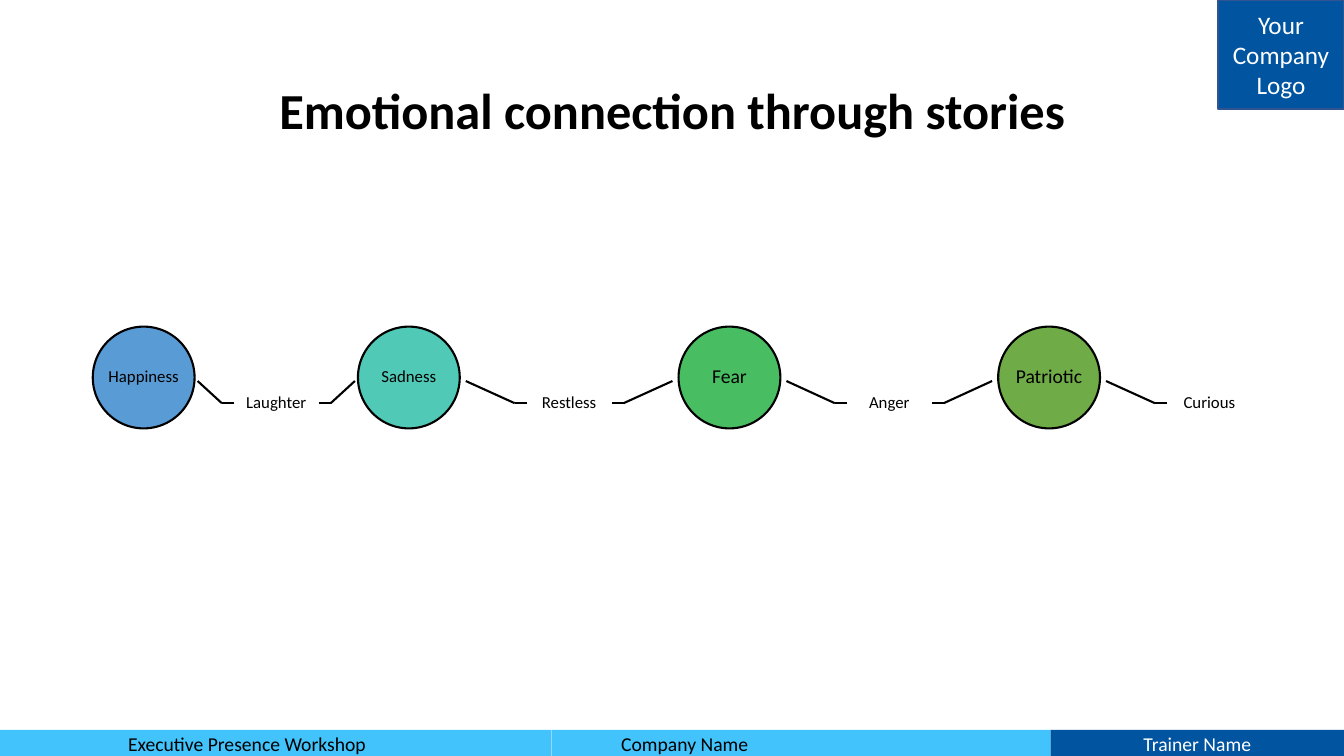
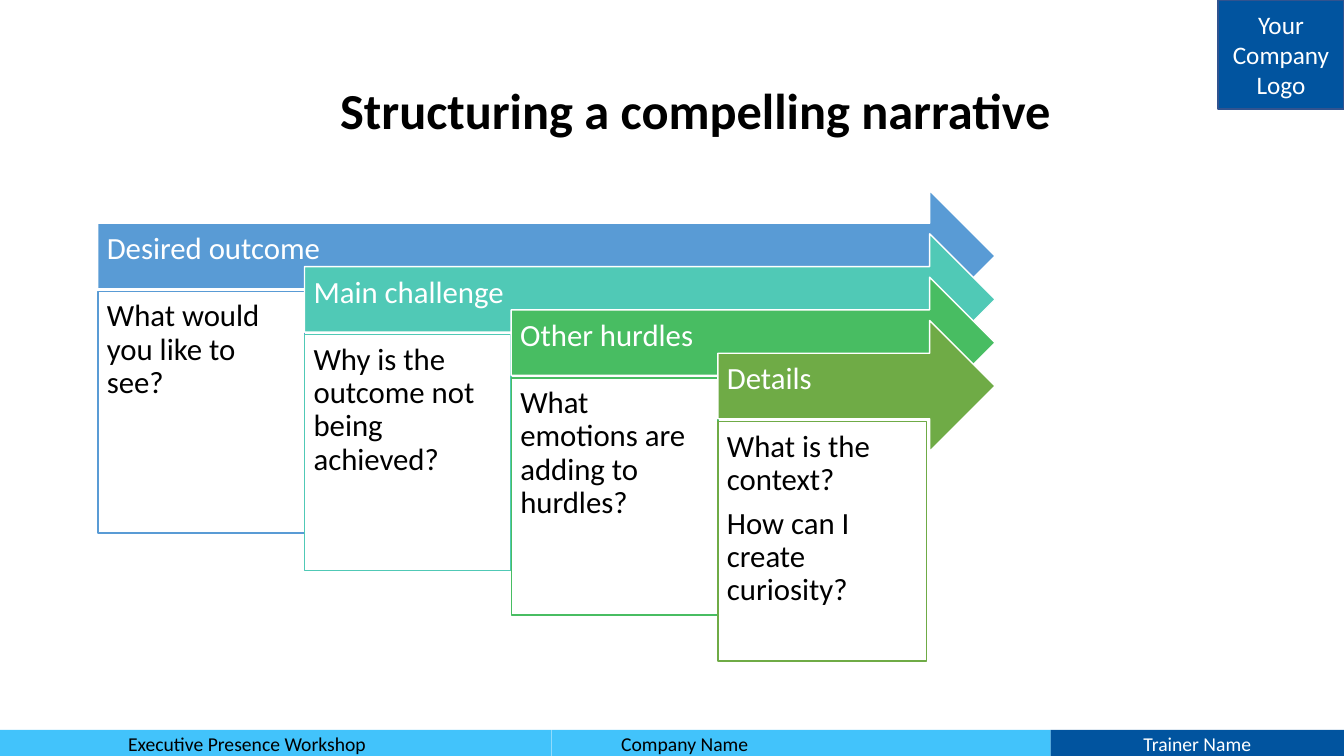
from lxml import etree
from pptx import Presentation
from pptx import util as u
from pptx.dml import color
from pptx.enum import shapes, text
from pptx.oxml import ns

BLACK, WHITE = "000000", "FFFFFF"
SKY, NAVY, NAVY_EDGE = "42C3FB", "01549F", "31538F"
STEP_COLOURS = ["599BD5", "50C9B6", "48BD62", "6FAB46"]
LEFT, CENTRE = text.PP_ALIGN.LEFT, text.PP_ALIGN.CENTER
MIDDLE, TOP = text.MSO_ANCHOR.MIDDLE, text.MSO_ANCHOR.TOP
RECT = shapes.MSO_SHAPE.RECTANGLE


def write(box, lines, size, ink, align=CENTRE, anchor=MIDDLE,
          insets=(0.1, 0.05, 0.1, 0.05), spacing=0.9, bold=False):
    """Fill the text frame of a shape, one paragraph per line."""
    frame = box.text_frame
    frame.auto_size = text.MSO_AUTO_SIZE.NONE
    frame.word_wrap = True
    frame.vertical_anchor = anchor
    (frame.margin_left, frame.margin_top,
     frame.margin_right, frame.margin_bottom) = map(u.Inches, insets)
    for index, line in enumerate(lines):
        para = frame.add_paragraph() if index else frame.paragraphs[0]
        para.alignment = align
        para.line_spacing = spacing
        para.space_before = u.Pt(7.7 if index and align == LEFT else 0)
        span = para.add_run()
        span.text = line
        span.font.name = "Calibri"
        span.font.size = u.Pt(size)
        span.font.bold = bold
        span.font.color.rgb = color.RGBColor.from_string(ink)


def draw(page, kind, area, fill, edge=None, weight=1):
    """Add a flat preset shape; area is left, top, width, height."""
    shape = page.shapes.add_shape(kind, *map(u.Inches, area))
    shape.shadow.inherit = False
    shape.fill.solid()
    shape.fill.fore_color.rgb = color.RGBColor.from_string(fill)
    if edge:
        shape.line.color.rgb = color.RGBColor.from_string(edge)
        shape.line.width = u.Pt(weight)
    else:
        shape.line.fill.background()
    return shape


deck = Presentation()
deck.slide_width, deck.slide_height = u.Inches(13.33), u.Inches(7.5)

# Shared frame: footer bands, logo block and title
# Footer: label, left, width, fill, ink, alignment, left inset
footer = [
    ("Executive Presence Workshop", 0, 5.47, SKY, BLACK, LEFT, 1.27),
    ("Company Name", 5.47, 4.95, SKY, BLACK, LEFT, 0.69),
    ("Trainer Name", 10.42, 2.91, NAVY, WHITE, CENTRE, 0.1),
]
# Title and its left edge
titles = [("Emotional connection through stories", 0.92),
          ("Structuring a compelling narrative", 1.15)]
pages = []
for heading, title_left in titles:
    page = deck.slides.add_slide(deck.slide_layouts[5])
    pages.append(page)
    for label, left, width, fill, ink, align, inset in footer:
        band = draw(page, RECT, (left, 7.24, width, 0.28), fill)
        write(band, [label], 14, ink, align,
              insets=(inset, 0.04, 0.1, 0.04), spacing=1)
    logo = draw(page, RECT, (12.08, 0, 1.25, 1.08), NAVY, NAVY_EDGE)
    write(logo, ["Your", "Company", "Logo"], 18, WHITE, spacing=1)

    title = page.shapes.title
    title.left, title.top = u.Inches(title_left), u.Inches(0.4)
    title.width, title.height = u.Inches(11.5), u.Inches(1.45)
    write(title, [heading], 36, BLACK, bold=True)
story_page, narrative_page = pages

# Slide 1: chain of emotions linked by reactions
# Emotion, circle left, text size, reaction that follows, gap beside circles
emotions = [
    ("Happiness", 0.92, 12, "Laughter", 0.03),
    ("Sadness", 3.55, 12, "Restless", 0.06),
    ("Fear", 6.73, 14, "Anger", 0.06),
    ("Patriotic", 9.9, 14, "Curious", 0.06),
]
DIAMETER, LABEL_WIDTH, STUB, PITCH = 1.01, 0.84, 0.12, 3.18
HIGH, LOW = 3.78, 4
for index, (emotion, left, size, reaction, gap) in enumerate(emotions):
    circle = draw(story_page, shapes.MSO_SHAPE.OVAL,
                  (left, 3.24, DIAMETER, DIAMETER),
                  STEP_COLOURS[index], BLACK, 1.5)
    write(circle, [emotion], size, BLACK, insets=(0, 0, 0, 0))
    circle.text_frame.word_wrap = False

    # Reaction label, centred between this circle and the next
    is_last = index == len(emotions) - 1
    right = left + DIAMETER
    next_left = left + PITCH if is_last else emotions[index + 1][1]
    label_left = (right + next_left - LABEL_WIDTH) / 2
    label_right = label_left + LABEL_WIDTH
    label = story_page.shapes.add_textbox(
        *map(u.Inches, (label_left, 3.75, LABEL_WIDTH, 0.5)))
    write(label, [reaction], 12, BLACK, insets=(0.09,) * 4)

    # Slanted line and short stub on each side of the label
    links = [(right + gap, HIGH, label_left - STUB, LOW),
             (label_left - STUB, LOW, label_left, LOW)]
    if not is_last:
        links += [(label_right, LOW, label_right + STUB, LOW),
                  (label_right + STUB, LOW, next_left - gap, HIGH)]
    for ends in links:
        link = story_page.shapes.add_connector(
            shapes.MSO_CONNECTOR.STRAIGHT, *map(u.Inches, ends))
        link.line.color.rgb = color.RGBColor.from_string(BLACK)
        link.line.width = u.Pt(1.5)
        etree.SubElement(link._element.spPr, ns.qn("a:effectLst"))

# Slide 2: staggered arrows, each with a question box below
# Arrow text, questions, box width, box height
steps = [
    ("Desired outcome", ["What would you like to see?"], 2.05, 2.4),
    ("Main challenge", ["Why is the outcome not being achieved?"], 2.05, 2.34),
    ("Other hurdles", ["What emotions are adding to hurdles?"], 2.05, 2.35),
    ("Details", ["What is the context?", "How can I create curiosity?"],
     2.07, 2.38),
]
ARROW_TIP = 9.87
for index, (name, questions, width, height) in enumerate(steps):
    left, top = 0.97 + 2.05 * index, 1.89 + 0.43 * index
    fill = STEP_COLOURS[index]
    arrow = draw(narrative_page, shapes.MSO_SHAPE.RIGHT_ARROW,
                 (left, top, ARROW_TIP - left, 1.3), fill, WHITE)
    write(arrow, [name], 22, WHITE, LEFT, insets=(0.09, 0.09, 0.28, 0.21))
    box = draw(narrative_page, RECT, (left, top + 1, width, height),
               WHITE, fill)
    write(box, questions, 22, BLACK, LEFT, TOP, insets=(0.09,) * 4)

deck.save("out.pptx")
